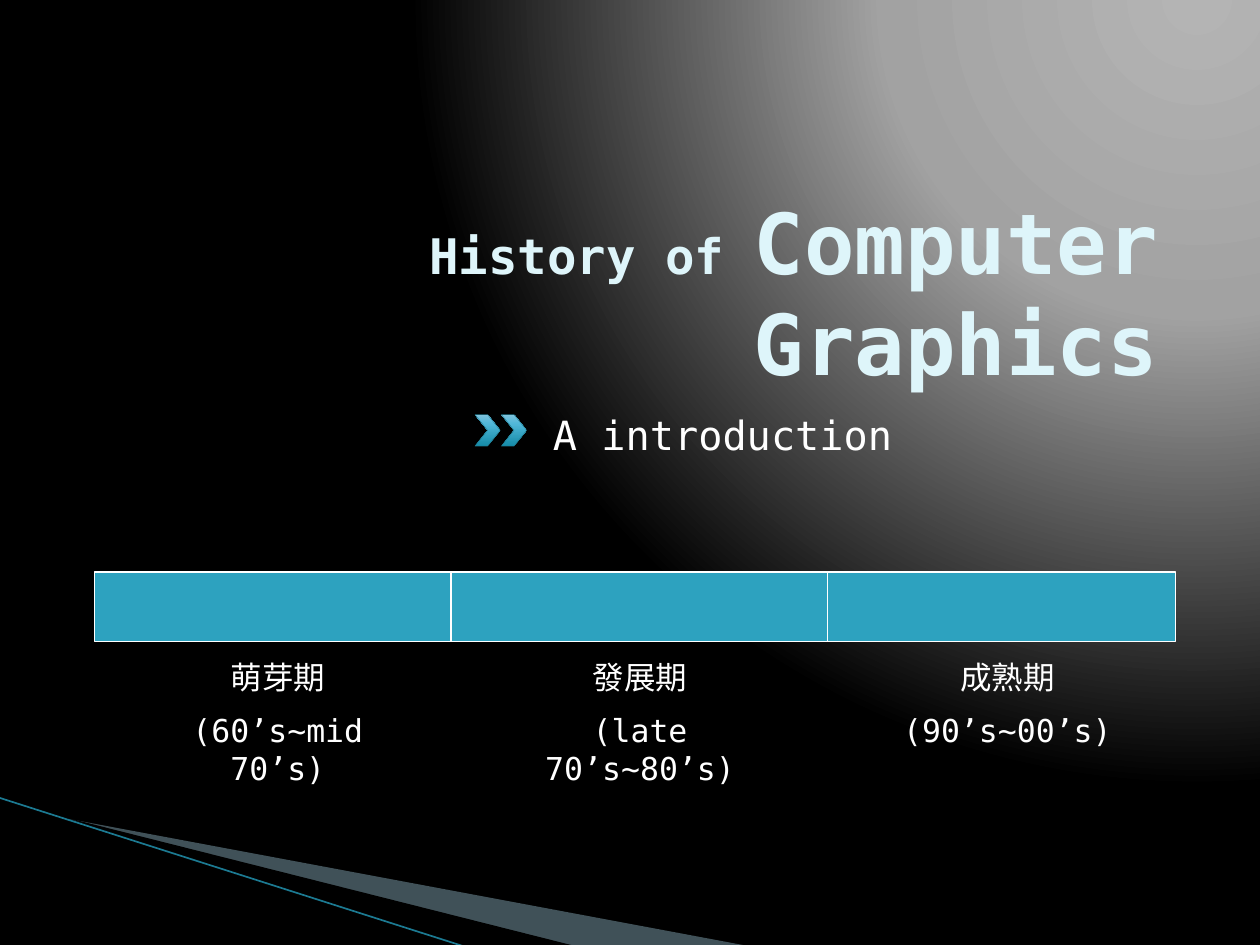
from pptx import Presentation
from pptx.dml.color import RGBColor
from pptx.enum import shapes, text
from pptx.oxml import parse_xml
from pptx.oxml.ns import nsdecls, qn
from pptx.util import Inches, Pt

FONT = "DejaVu Sans Mono"
WHITE = "FFFFFF"
BLACK = "000000"
TITLE = [("History of ", 28), ("Computer Graphics", 48)]
SUBTITLE = "A introduction"
ERAS = [
    (2.83, 1.14, 2.13, ["萌芽期", "(60’s~mid 70’s)"]),
    (2.99, 3.9, 2.36, ["發展期", "(late 70’s~80’s)"]),
    (2.76, 6.97, 2.05, ["成熟期", "(90’s~00’s)"]),
]
BAR_LEFT, BAR_TOP, BAR_HEIGHT = 0.75, 4.54, 0.55
WEDGES = [
    ([(0.55, 6.5), (5.95, 7.51), (4.56, 7.51)], "A0CBDC", 40),
    ([(0.53, 6.49), (4.57, 7.51), (3.72, 7.52)], BLACK, 100),
]
BACKGROUND = [(0, "B4B4B4"), (40, "A2A2A2"), (100, BLACK)]
CHEVRON = [(0, "158BA8"), (72, "51B8D9"), (100, "80C3DD")]


def rgb(value):
    return RGBColor.from_string(value)


def gradient(stops, direction):
    items = "".join(
        f'<a:gs pos="{pos * 1000}"><a:srgbClr val="{color}"/></a:gs>'
        for pos, color in stops
    )
    return (f'<a:gradFill {nsdecls("a")} rotWithShape="1">'
            f"<a:gsLst>{items}</a:gsLst>{direction}</a:gradFill>")


def set_background(slide):
    circle = ('<a:path path="circle">'
              '<a:fillToRect l="95000" t="-106000" r="5000" b="206000"/></a:path>')
    bg = parse_xml(f'<p:bg {nsdecls("p", "a")}><p:bgPr>{gradient(BACKGROUND, circle)}'
                   "<a:effectLst/></p:bgPr></p:bg>")
    slide.element.cSld.insert(0, bg)


def add_text(slide, box, paragraphs, color=WHITE, bold=False, align="LEFT",
             anchor="TOP", gap=0):
    s = slide.shapes.add_textbox(*map(Inches, box))
    tf = s.text_frame
    tf.word_wrap = True
    tf.vertical_anchor = getattr(text.MSO_ANCHOR, anchor)
    for i, runs in enumerate(paragraphs):
        p = tf.add_paragraph() if i else tf.paragraphs[0]
        p.alignment = getattr(text.PP_ALIGN, align)
        if i:
            p.space_before = Pt(gap)
        for words, size in runs:
            r = p.add_run()
            r.text = words
            r.font.name = FONT
            r.font.size = Pt(size)
            r.font.bold = bold
            r.font.color.rgb = rgb(color)
            for tag in ("a:ea", "a:cs"):
                r.font._element.append(
                    parse_xml(f'<{tag} {nsdecls("a")} typeface="{FONT}"/>'))
    return s


def add_wedge(slide, points, color, opacity):
    corners = [(Inches(x), Inches(y)) for x, y in points]
    builder = slide.shapes.build_freeform(*corners[0], scale=1.0)
    builder.add_line_segments(corners[1:], close=True)
    s = builder.convert_to_shape()
    s.shadow.inherit = False
    s.fill.solid()
    s.fill.fore_color.rgb = rgb(color)
    s.line.fill.background()
    if opacity < 100:
        s._element.spPr.find(qn("a:solidFill"))[0].append(
            parse_xml(f'<a:alpha {nsdecls("a")} val="{opacity * 1000}"/>'))


def add_accent_line(slide):
    line = slide.shapes.add_connector(
        shapes.MSO_CONNECTOR.STRAIGHT,
        *map(Inches, (-0.01, 6.33, 3.71, 7.52)))
    line.line.color.rgb = rgb("1C7A92")
    line.line.width = Pt(0.95)
    line._element.spPr.append(parse_xml(f'<a:effectLst {nsdecls("a")}/>'))


def add_preset(slide, kind, box, line, width):
    s = slide.shapes.add_shape(kind, *map(Inches, box))
    s.shadow.inherit = False
    s.line.color.rgb = rgb(line)
    s.line.width = Pt(width)
    return s


def add_chevron(slide, left):
    s = add_preset(slide, shapes.MSO_SHAPE.CHEVRON, (left, 3.29, 0.2, 0.25),
                   "21788D", 0.25)
    sp = s._element.spPr
    sp.insert(2, parse_xml(gradient(CHEVRON, '<a:lin ang="16200000" scaled="0"/>')))
    sp.find(qn("a:effectLst")).append(parse_xml(
        f'<a:outerShdw {nsdecls("a")} blurRad="{Pt(4)}" dist="{Pt(2)}" dir="5400000">'
        f'<a:srgbClr val="{BLACK}"><a:alpha val="46000"/></a:srgbClr></a:outerShdw>'))


def main():
    prs = Presentation()
    prs.slide_width, prs.slide_height = Inches(10), Inches(7.5)
    slide = prs.slides.add_slide(prs.slide_layouts[6])
    set_background(slide)
    for wedge in WEDGES:
        add_wedge(slide, *wedge)
    add_accent_line(slide)
    for left in (3.98, 3.77):
        add_chevron(slide, left)
    add_text(slide, (0.79, 1.16, 8.5, 2), [TITLE], color="DEF5FA", bold=True,
             align="RIGHT", anchor="BOTTOM")
    add_text(slide, (4.29, 3.21, 5, 1.59), [[(SUBTITLE, 23)]])

    left = BAR_LEFT
    for width, label_left, label_width, lines in ERAS:
        bar = add_preset(slide, shapes.MSO_SHAPE.RECTANGLE,
                         (left, BAR_TOP, width, BAR_HEIGHT), WHITE, 0.75)
        bar.fill.solid()
        bar.fill.fore_color.rgb = rgb("2DA2BF")
        add_text(slide, (label_left, 5.17, label_width, 0.85),
                 [[(words, 18)] for words in lines], align="CENTER", gap=9)
        left += width
    prs.save("out.pptx")


if __name__ == "__main__":
    main()
